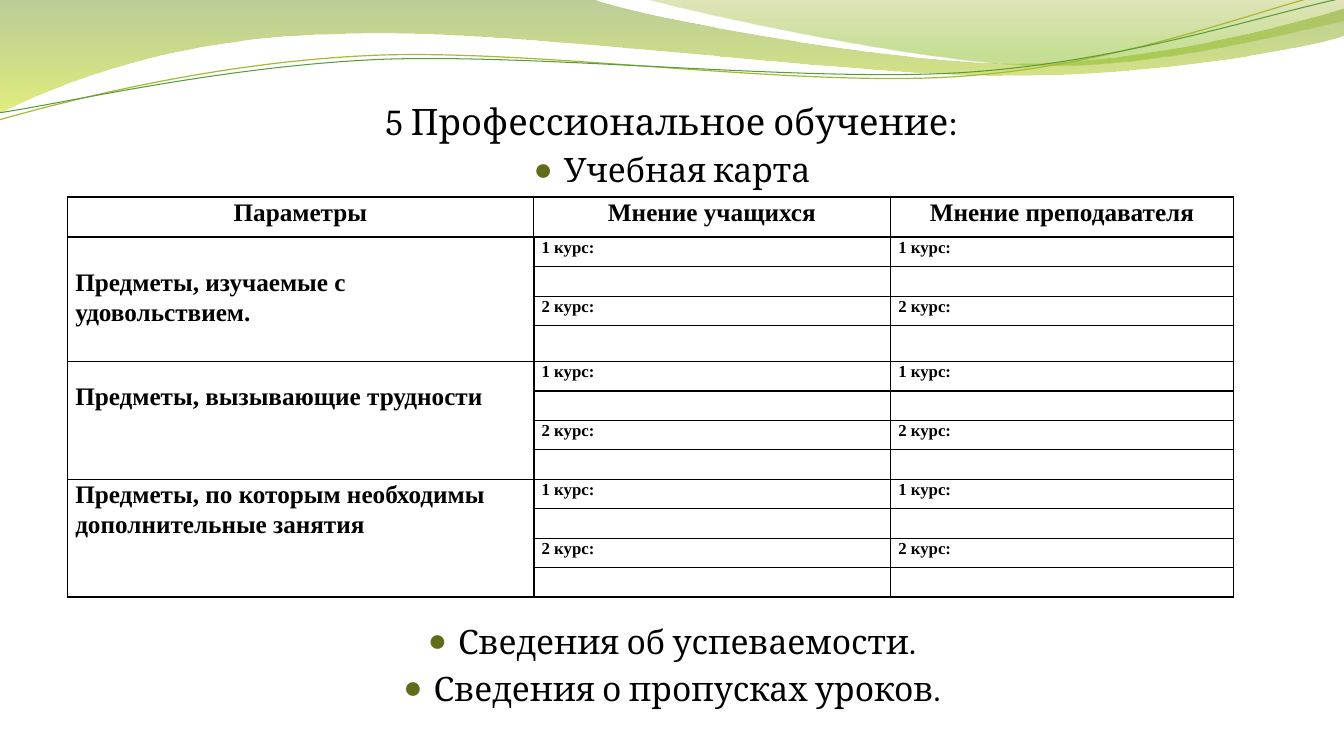
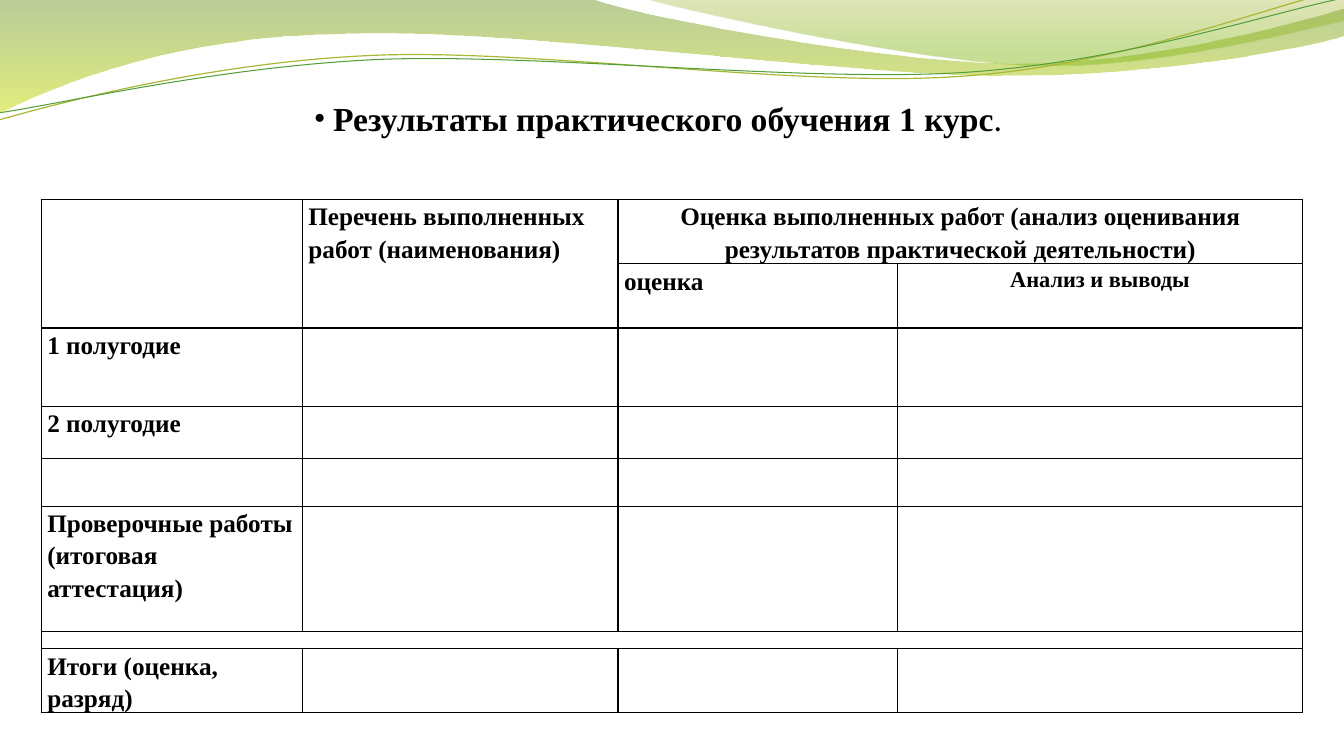
"""Build two slides on vocational training: a study card and practical results."""
from math import cos, radians, sin

from lxml.etree import SubElement
from pptx import Presentation
from pptx.dml.color import RGBColor
from pptx.enum.text import MSO_ANCHOR, MSO_AUTO_SIZE, PP_ALIGN
from pptx.oxml import parse_xml
from pptx.oxml.ns import nsdecls, qn
from pptx.util import Inches, Pt

WIDTH, HEIGHT = 13.33, 7.5
COLORS = {
    "ink": "000000", "bullet": "626B1A",
    "moss": "69921C", "lime": "CCE10F", "olive": "9BAA1A", "leaf": "81BA16",
    "upper line": "A9B733", "lower line": "549E39",
}
SERIF, TABLE_FONT, PLAIN = "Cambria", "Times New Roman", "Calibri"
THIN, THICK = 1, 1.5
TILT = 2.7

WAVES = [
    ([("moss", 0, 45), ("lime", 100, 55)],
     [(0, 0), (5.87, -0.01), (6.34, 0.17, 8.84, 0.63, 10.11, 0.63),
      (11.37, 0.63, 12.77, 0.26, 13.33, 0.09), (13.34, 0.36),
      (13.11, 0.44, 11.59, 0.76, 9.94, 0.75), (8.29, 0.75, 5.09, 0.28, 3.43, 0.34),
      (1.72, 0.36, 0.61, 0.83, -0.02, 1.13)]),
    ([("olive", 0, 30), ("leaf", 80, 45)],
     [(6.38, -0.01), (6.79, 0.11, 9.09, 0.62, 10.25, 0.65),
      (11.4, 0.69, 12.82, 0.32, 13.33, 0.21), (13.33, 0)]),
]
STRANDS = [
    ("upper line", 0.85, (6.65, 0.57),
     [(-0.01, 1.19), (0.63, 1.01, 2.1, 0.62, 3.69, 0.55),
      (5.27, 0.48, 7.89, 0.87, 9.49, 0.76), (11.1, 0.66, 12.51, 0.08, 13.3, -0.1)]),
    ("lower line", 0.75, (6.67, 0.59),
     [(-0.01, 1.12), (0.62, 1.03, 2.18, 0.66, 3.77, 0.59),
      (5.37, 0.53, 7.96, 0.82, 9.55, 0.72), (11.14, 0.62, 12.55, 0.14, 13.33, -0.02)]),
]


def across(percent):
    """Return a share of the slide's width."""
    return Inches(WIDTH * percent / 100)


def down(percent):
    """Return a share of the slide's height."""
    return Inches(HEIGHT * percent / 100)


def color(name):
    """Return a palette colour."""
    return RGBColor.from_string(COLORS[name])


def pairs(step):
    """Split a flat step into points."""
    return list(zip(step[::2], step[1::2]))


def level(outline, center):
    """Turn an outline clockwise by the tilt around its center."""
    cx, cy = center
    c, s = cos(radians(TILT)), sin(radians(TILT))
    return [tuple(value for x, y in pairs(step)
                  for value in (cx + (x - cx) * c - (y - cy) * s,
                                cy + (x - cx) * s + (y - cy) * c))
            for step in outline]


def draw_outline(slide, outline, closed):
    """Draw an outline whose six-number steps are Bezier curves."""
    start, *ends = [tuple(Inches(value) for value in step[-2:]) for step in outline]
    builder = slide.shapes.build_freeform(*start)
    builder.add_line_segments(ends, close=closed)
    ribbon = builder.convert_to_shape()
    ribbon.shadow.inherit = False
    segments = list(ribbon.element.iter(qn("a:lnTo")))
    for segment, step in zip(segments, outline[1:]):
        if len(step) == 6:
            points = "".join(f'<a:pt x="{Inches(x) - ribbon.left}" y="{Inches(y) - ribbon.top}"/>'
                             for x, y in pairs(step))
            curve = parse_xml(f'<a:cubicBezTo {nsdecls("a")}>{points}</a:cubicBezTo>')
            segment.getparent().replace(segment, curve)
    return ribbon


def fade(ribbon, stops):
    """Give a shape a downward gradient of translucent colours."""
    marks = "".join(
        f'<a:gs pos="{place * 1000}"><a:srgbClr val="{COLORS[name]}">'
        f'<a:alpha val="{opacity * 1000}"/></a:srgbClr></a:gs>'
        for name, place, opacity in stops)
    gradient = parse_xml(f'<a:gradFill {nsdecls("a")} rotWithShape="1"><a:gsLst>{marks}'
                         '</a:gsLst><a:lin ang="5400000" scaled="0"/></a:gradFill>')
    ribbon.element.spPr.find(qn("a:custGeom")).addnext(gradient)


def decorate_master(prs, slide):
    """Draw the wave band and hand it to the slide master."""
    band = []
    for stops, outline in WAVES:
        wave = draw_outline(slide, outline, True)
        wave.line.fill.background()
        fade(wave, stops)
        band.append(wave)
    for name, weight, center, outline in STRANDS:
        strand = draw_outline(slide, level(outline, center), False)
        strand.rotation = 360 - TILT
        strand.fill.background()
        strand.line.color.rgb = color(name)
        strand.line.width = Pt(weight)
        band.append(strand)
    for ribbon in band:
        prs.slide_master.shapes.element.append(ribbon.element)


def add_text(paragraph, text, size, font, bold=False):
    """Add one run."""
    run = paragraph.add_run()
    run.text = text
    run.font.size, run.font.name, run.font.bold = Pt(size), font, bold
    run.font.color.rgb = color("ink")


def set_bullet(paragraph, mark=None, indent=0, tint="ink", size=100):
    """Give a paragraph a hanging bullet, or none."""
    props = paragraph._p.get_or_add_pPr()
    props.set("marL", str(Inches(indent)))
    props.set("indent", str(-Inches(indent)))
    if mark is None:
        SubElement(props, qn("a:buNone"))
        return
    SubElement(SubElement(props, qn("a:buClr")), qn("a:srgbClr")).set("val", COLORS[tint])
    SubElement(props, qn("a:buSzPct")).set("val", str(size * 1000))
    SubElement(props, qn("a:buFont")).set("typeface", TABLE_FONT)
    SubElement(props, qn("a:buChar")).set("char", mark)


def place(holder, left, top, width, height):
    """Move a placeholder and return its text frame."""
    holder.left, holder.top = across(left), down(top)
    holder.width, holder.height = across(width), down(height)
    holder.text_frame.auto_size = MSO_AUTO_SIZE.NONE
    return holder.text_frame


def set_borders(cell, left=THIN, right=THIN, top=THIN, bottom=THIN):
    """Draw the four edges of a cell."""
    props = cell._tc.get_or_add_tcPr()
    for i, (side, weight) in enumerate(zip("LRTB", (left, right, top, bottom))):
        props.insert(i, parse_xml(
            f'<a:ln{side} {nsdecls("a")} w="{Pt(weight)}"><a:solidFill>'
            f'<a:srgbClr val="{COLORS["ink"]}"/></a:solidFill></a:ln{side}>'))


def add_grid(slide, box, columns, rows, margin):
    """Add an unfilled table whose columns and rows share out its box."""
    left, top, width, height = box
    table = slide.shapes.add_table(len(rows), len(columns), across(left), down(top),
                                   across(width), down(height)).table
    table.first_row = table.horz_banding = False
    for column, weight in zip(table.columns, columns):
        column.width = across(width * weight / sum(columns))
    for row, weight in zip(table.rows, rows):
        row.height = down(height * weight / sum(rows))
    for cell in table.iter_cells():
        cell.margin_left = cell.margin_right = Inches(margin)
        cell.margin_top = cell.margin_bottom = 0
        cell.fill.background()
        SubElement(cell.text_frame.paragraphs[0]._p, qn("a:endParaRPr")).set("sz", "800")
    return table


def fill_cell(cell, lines, spacing, size=18, centred=False, drop=0):
    """Write bold lines into a cell, lowered by a drop in inches."""
    cell.margin_top = Inches(drop)
    for i, line in enumerate(lines):
        frame = cell.text_frame
        paragraph = frame.add_paragraph() if i else frame.paragraphs[0]
        paragraph.line_spacing = spacing
        paragraph.alignment = PP_ALIGN.CENTER if centred else PP_ALIGN.LEFT
        add_text(paragraph, line, size, TABLE_FONT, True)


def write_outline(slide):
    """Write the heading and the bullets above and below the study card."""
    title, body = slide.placeholders
    title.element.getparent().remove(title.element)
    frame = place(body, 5, 12.4, 90, 85.5)
    heading = frame.paragraphs[0]
    heading.alignment = PP_ALIGN.CENTER
    set_bullet(heading)
    add_text(heading, "5 Профессиональное обучение:", 26, SERIF)
    for gap, line in [(4.8, "Учебная карта"), (308, "Сведения об успеваемости."),
                      (4.8, "Сведения о пропусках уроков.")]:
        paragraph = frame.add_paragraph()
        paragraph.alignment = PP_ALIGN.CENTER
        paragraph.space_before = Pt(gap)
        set_bullet(paragraph, "●", 0.3, "bullet", 95)
        add_text(paragraph, line, 24, SERIF)


def build_study_card(slide):
    """Fill the slide with the study card."""
    write_outline(slide)
    rows = [40] + [29.5] * 3 + [36] + [29.5] * 8
    table = add_grid(slide, (5, 26.1, 86.8, 52.9), [4.63, 3.54, 3.41], rows, 0.08)
    for r in range(len(rows)):
        for c in range(3):
            set_borders(table.cell(r, c),
                        left=THICK if r and c == 1 else THIN,
                        right=THICK if r and c == 0 else THIN,
                        top=THICK if r < 2 else THIN,
                        bottom=THIN if r else THICK)
    for c, heading in enumerate(["Параметры", "Мнение учащихся", "Мнение преподавателя"]):
        fill_cell(table.cell(0, c), [heading], 1.07, centred=True)

    topics = [
        (["Предметы, изучаемые с удовольствием."], 0.3),
        (["Предметы, вызывающие трудности"], 0.19),
        (["Предметы, по которым необходимы", "дополнительные занятия"], 0),
    ]
    for i, (lines, drop) in enumerate(topics):
        first = 1 + 4 * i
        table.cell(first, 0).merge(table.cell(first + 3, 0))
        fill_cell(table.cell(first, 0), lines, 1.07, drop=drop)
        for year in (1, 2):
            for c in (1, 2):
                fill_cell(table.cell(first + 2 * (year - 1), c), [f"{year} курс:"], 1.07, 12)


def build_practice_results(slide):
    """Fill the slide with the results of practical training."""
    frame = place(slide.shapes.title, 22.36, 12.3, 53.2, 6.7)
    frame.word_wrap, frame.vertical_anchor = False, MSO_ANCHOR.MIDDLE
    heading = frame.paragraphs[0]
    heading.alignment = PP_ALIGN.CENTER
    set_bullet(heading, "•", 0.19)
    add_text(heading, "Результаты практического обучения 1 курс", 24, TABLE_FONT, True)
    add_text(heading, ".", 24, PLAIN)

    table = add_grid(slide, (3.07, 26.36, 93.86, 67.9), [2.59, 3.13, 2.77, 4.02],
                     [64.5, 64, 78, 52, 48, 125, 17, 64], 0.06)
    for cell in table.iter_cells():
        set_borders(cell)
    for start, end in [((0, 0), (1, 0)), ((0, 1), (1, 1)), ((0, 2), (0, 3)), ((6, 0), (6, 3))]:
        table.cell(*start).merge(table.cell(*end))

    fill_cell(table.cell(0, 1), ["Перечень выполненных работ (наименования)"], 1.15)
    fill_cell(table.cell(0, 2), ["Оценка выполненных работ (анализ оценивания "
                                 "результатов практической деятельности)"], 1.15, centred=True)
    fill_cell(table.cell(1, 2), ["оценка"], 1.15)
    fill_cell(table.cell(1, 3), ["Анализ и выводы"], 1.15, 16, centred=True)
    stages = {2: "1 полугодие", 3: "2 полугодие",
              5: "Проверочные работы (итоговая аттестация)", 7: "Итоги (оценка, разряд)"}
    for r, stage in stages.items():
        fill_cell(table.cell(r, 0), [stage], 1.15)


def main():
    """Build and save the presentation."""
    prs = Presentation()
    prs.slide_width, prs.slide_height = Inches(WIDTH), Inches(HEIGHT)
    study_card = prs.slides.add_slide(prs.slide_layouts[1])
    practice_results = prs.slides.add_slide(prs.slide_layouts[5])
    decorate_master(prs, study_card)
    build_study_card(study_card)
    build_practice_results(practice_results)
    prs.save("out.pptx")


if __name__ == "__main__":
    main()
